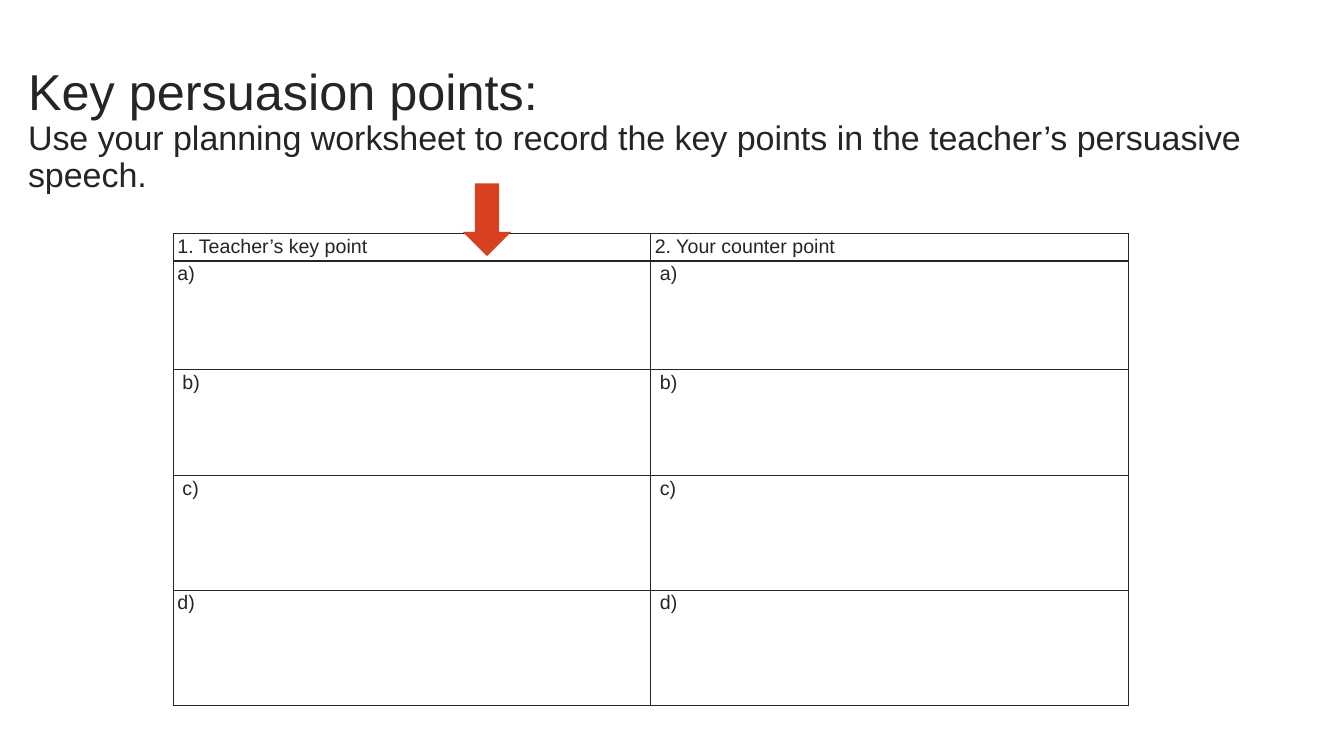
from lxml import etree
from pptx import Presentation
from pptx import util as u
from pptx.dml.color import RGBColor
from pptx.enum import shapes, text
from pptx.oxml.ns import qn


def rgb(value):
    return RGBColor.from_string(value)


class Worksheet:
    """Build the slide's elements in one shared style."""

    font = "Arial"
    ink = "252525"
    accent = "D74120"

    def __init__(self, prs):
        self.s = prs.slides.add_slide(prs.slide_layouts[6])

    def style(self, r, size):
        r.font.name = self.font
        r.font.size = u.Pt(size)
        r.font.bold = False
        r.font.color.rgb = rgb(self.ink)

    def heading(self, title, instruction, box):
        tf = self.s.shapes.add_textbox(*map(u.Inches, box)).text_frame
        tf.word_wrap = True
        tf.vertical_anchor = text.MSO_ANCHOR.MIDDLE
        tf.text = f"{title}\v{instruction}"
        p = tf.paragraphs[0]
        p.line_spacing = 0.9
        for r, size in zip(p.runs, (36, 24.3)):
            self.style(r, size)

    def border(self, cell):
        tc_pr = cell._tc.get_or_add_tcPr()
        for side in ("lnL", "lnR", "lnT", "lnB"):
            ln = etree.SubElement(tc_pr, qn(f"a:{side}"), w=str(u.Pt(1)))
            fill = etree.SubElement(ln, qn("a:solidFill"))
            etree.SubElement(fill, qn("a:srgbClr"), val=self.ink)

    def cell(self, cell, label, indent):
        self.border(cell)
        cell.fill.background()
        cell.margin_left = u.Inches(0.04 + indent)
        cell.margin_right = u.Inches(0.04)
        cell.margin_top = cell.margin_bottom = 0
        cell.text = label
        p = cell.text_frame.paragraphs[0]
        p.line_spacing = 1.07
        self.style(p.runs[0], 14)

    def table(self, rows, heights, indented, box):
        shape = self.s.shapes.add_table(len(rows), len(rows[0]), *map(u.Inches, box))
        table = shape.table
        table.first_row = table.horz_banding = False
        for i, (row, height) in enumerate(zip(rows, heights)):
            table.rows[i].height = u.Inches(height)
            for j, label in enumerate(row):
                self.cell(table.cell(i, j), label, 0.05 if (i, j) in indented else 0)

    def arrow(self, box):
        sp = self.s.shapes.add_shape(shapes.MSO_SHAPE.DOWN_ARROW, *map(u.Inches, box))
        sp.shadow.inherit = False
        sp.fill.solid()
        sp.fill.fore_color.rgb = rgb(self.accent)
        sp.line.fill.background()


def main():
    prs = Presentation()
    prs.slide_width, prs.slide_height = u.Inches(13.33), u.Inches(7.5)
    sheet = Worksheet(prs)
    sheet.heading(
        "Key persuasion points:",
        "Use your planning worksheet to record the key points in the teacher’s persuasive speech.",
        (0.18, 0.9, 12.8, 0.79),
    )
    headers = ("1. Teacher’s key point", "2. Your counter point")
    points = [(f"{letter})",) * 2 for letter in "abcd"]
    indented = {(2, 0), (3, 0)} | {(i, 1) for i in range(1, 5)}
    sheet.table([headers, *points], (0.27, 1.08, 1.05, 1.14, 1.14), indented,
                (1.72, 2.32, 9.47, 4.68))
    sheet.arrow((4.59, 1.82, 0.48, 0.72))
    prs.save("out.pptx")


if __name__ == "__main__":
    main()
